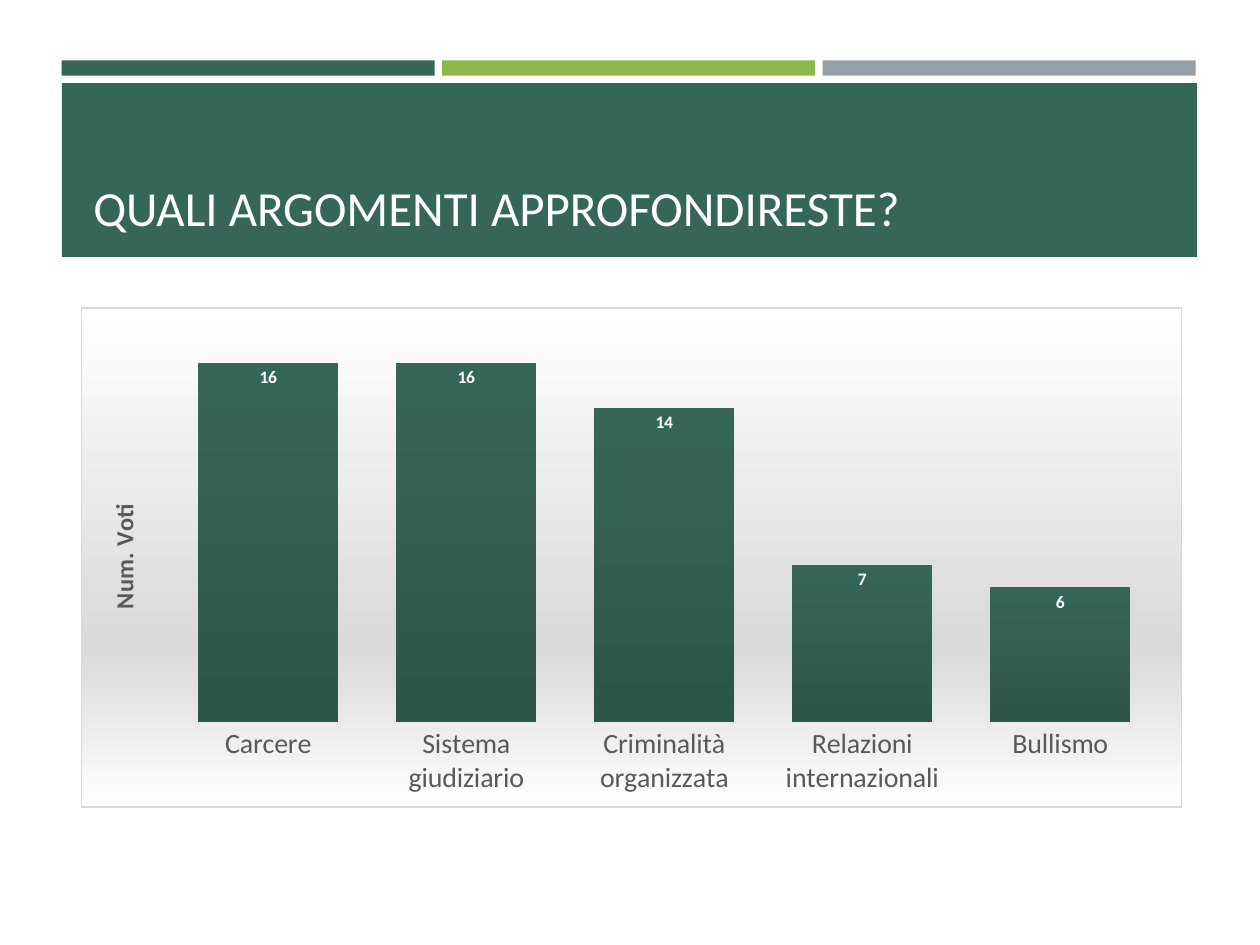
from dataclasses import dataclass

from pptx import Presentation
from pptx.chart.data import CategoryChartData
from pptx.dml.color import RGBColor
from pptx.enum.chart import XL_CHART_TYPE as ChartType
from pptx.enum.chart import XL_LABEL_POSITION as LabelPosition
from pptx.enum.chart import XL_TICK_MARK as TickMark
from pptx.enum.shapes import MSO_SHAPE as Preset
from pptx.enum.text import MSO_ANCHOR as Anchor
from pptx.enum.text import PP_ALIGN as Align
from pptx.oxml import parse_xml
from pptx.oxml.ns import nsdecls, qn
from pptx.util import Inches, Pt

FONT = "Calibri"
GREEN, LIME, GREY = "366658", "8CB64A", "969FA7"
DARK_GREEN, WHITE, SILVER, TEXT_GREY = "2D564A", "FFFFFF", "D9D9D9", "595959"


@dataclass
class Band:
    left: float
    top: float
    width: float
    height: float
    color: str


def rgb(color: str) -> RGBColor:
    return RGBColor.from_string(color)


def style_font(font, size: float, color: str, bold: bool = False) -> None:
    font.name, font.size, font.bold = FONT, Pt(size), bold
    font.color.rgb = rgb(color)


def draw_band(slide, band: Band):
    shape = slide.shapes.add_shape(
        Preset.RECTANGLE, Inches(band.left), Inches(band.top),
        Inches(band.width), Inches(band.height))
    shape.shadow.inherit = False
    shape.fill.solid()
    shape.fill.fore_color.rgb = rgb(band.color)
    shape.line.fill.background()
    return shape


def vertical_gradient(stops: list[tuple[int, str]]) -> str:
    colors = "".join(
        f'<a:gs pos="{percent * 1000}"><a:srgbClr val="{color}"/></a:gs>'
        for percent, color in stops)
    return (f'<a:gradFill {nsdecls("a")} rotWithShape="1"><a:gsLst>{colors}</a:gsLst>'
            '<a:lin ang="5400000" scaled="0"/></a:gradFill>')


def fill_chart_area(chart) -> None:
    fill = vertical_gradient([(0, WHITE), (68, SILVER), (100, WHITE)])
    chart_space = chart.element
    chart_space.find(qn("c:chart")).addnext(parse_xml(
        f'<c:spPr {nsdecls("c", "a")}>{fill}<a:ln w="{Pt(0.75)}"><a:solidFill>'
        f'<a:srgbClr val="{SILVER}"/></a:solidFill></a:ln></c:spPr>'))


def place_plot(chart, x: float, y: float, w: float, h: float) -> None:
    plot_area = chart.element.find(qn("c:chart")).find(qn("c:plotArea"))
    for layout in plot_area.findall(qn("c:layout")):
        plot_area.remove(layout)
    sizes = "".join(f'<c:{key} val="{value}"/>'
                    for key, value in zip("xywh", (x, y, w, h)))
    plot_area.insert(0, parse_xml(
        f'<c:layout {nsdecls("c")}><c:manualLayout><c:layoutTarget val="inner"/>'
        f'<c:xMode val="edge"/><c:yMode val="edge"/>{sizes}</c:manualLayout></c:layout>'))


def draw_votes(slide, votes: dict[str, int]) -> None:
    data = CategoryChartData()
    data.categories = list(votes)
    data.add_series("Series 1", list(votes.values()))
    chart = slide.shapes.add_chart(
        ChartType.COLUMN_CLUSTERED, Inches(0.64), Inches(2.44),
        Inches(8.74), Inches(3.97), data).chart
    style_font(chart.font, 10, "000000")
    chart.has_title = chart.has_legend = False
    fill_chart_area(chart)
    place_plot(chart, 0.08, 0.02, 0.9, 0.81)

    # Columns and their values
    plot = chart.plots[0]
    plot.gap_width, plot.vary_by_categories = 41, False
    columns = plot.series[0]
    columns.format.line.fill.background()
    columns.format.fill.background()
    spPr = columns._element.find(qn("c:spPr"))
    spPr.replace(spPr.find(qn("a:noFill")),
                 parse_xml(vertical_gradient([(0, GREEN), (100, DARK_GREEN)])))
    labels = columns.data_labels
    labels.show_value, labels.position = True, LabelPosition.INSIDE_END
    style_font(labels.font, 10, WHITE, bold=True)

    # Axes
    topics = chart.category_axis
    topics.major_tick_mark = topics.minor_tick_mark = TickMark.NONE
    topics.format.line.fill.background()
    style_font(topics.tick_labels.font, 16, TEXT_GREY)
    scale = chart.value_axis
    scale.minimum_scale, scale.maximum_scale = 0, 18
    scale.has_major_gridlines = False
    scale.visible = False
    caption = scale.axis_title.text_frame
    caption.text = "Num. Voti"
    style_font(caption.paragraphs[0].runs[0].font, 14, TEXT_GREY, bold=True)


def main() -> None:
    deck = Presentation()
    deck.slide_width, deck.slide_height = Inches(10), Inches(7.5)
    slide = deck.slides.add_slide(deck.slide_layouts[5])

    # Three strips above the title banner
    strip_width, gap = 2.96, 0.06
    for index, color in enumerate((GREEN, LIME, GREY)):
        draw_band(slide, Band(0.49 + index * (strip_width + gap), 0.48,
                              strip_width, 0.12, color))
    banner = draw_band(slide, Band(0.49, 0.66, 9.01, 1.38, GREEN))

    # Title, in front of the banner
    title = slide.shapes.title
    banner._element.addnext(title._element)
    title.left, title.top = Inches(0.64), Inches(0.75)
    title.width, title.height = Inches(8.74), Inches(1.18)
    title.text_frame.text = "QUALI ARGOMENTI APPROFONDIRESTE?"
    title.text_frame.vertical_anchor = Anchor.BOTTOM
    heading = title.text_frame.paragraphs[0]
    heading.alignment = Align.LEFT
    style_font(heading.runs[0].font, 28, WHITE)

    draw_votes(slide, {
        "Carcere": 16,
        "Sistema giudiziario": 16,
        "Criminalità organizzata": 14,
        "Relazioni internazionali": 7,
        "Bullismo": 6,
    })
    deck.save("out.pptx")


if __name__ == "__main__":
    main()
